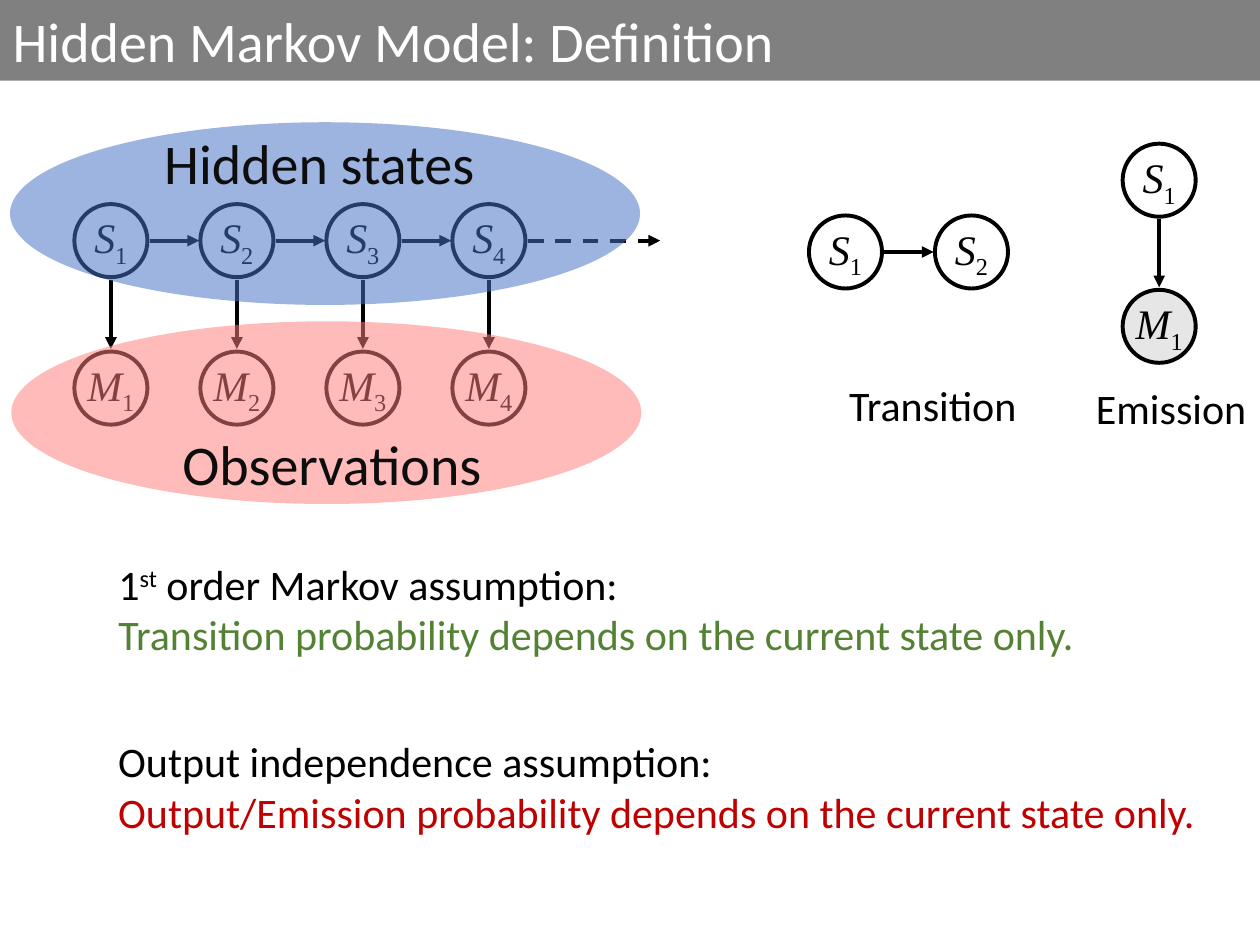
from lxml import etree
from pptx import Presentation
from pptx import util as u
from pptx.dml.color import RGBColor
from pptx.enum import dml, shapes, text
from pptx.oxml.ns import qn

BLACK = RGBColor(0x00, 0x00, 0x00)
INK = RGBColor(0x0D, 0x0D, 0x0D)
WHITE = RGBColor(0xFF, 0xFF, 0xFF)
GRAY = RGBColor(0x80, 0x80, 0x80)
PALE = RGBColor(0xE7, 0xE6, 0xE6)
GREEN = RGBColor(0x54, 0x82, 0x35)
RED = RGBColor(0xC0, 0x00, 0x00)
BLUE = RGBColor(0x44, 0x72, 0xC4)
PINK = RGBColor(0xFF, 0x7E, 0x79)

SIZE = 0.58
STEP = 1
GAP = 0.02
LEFT = 0.59
STATE_Y = 1.62
OBS_Y = 2.79


def write(frame, lines, size=24, font="Calibri", color=BLACK,
          align=text.PP_ALIGN.LEFT, anchor=text.MSO_ANCHOR.TOP, wrap=True):
    frame.word_wrap = wrap
    frame.auto_size = text.MSO_AUTO_SIZE.NONE
    frame.vertical_anchor = anchor
    for i, line in enumerate(lines):
        para = frame.paragraphs[0] if i == 0 else frame.add_paragraph()
        para.alignment = align
        for words, look in line:
            run = para.add_run()
            run.text = words
            run.font.size = u.Pt(size)
            run.font.name = font
            run.font.italic = look.get("italic", False)
            run.font.color.rgb = look.get("color", color)
            if "base" in look:
                run.font._element.set("baseline", str(look["base"] * 1000))


def label(slide, box, lines, **look):
    shape = slide.shapes.add_textbox(*map(u.Inches, box))
    write(shape.text_frame, lines, **look)


def oval(slide, box, fill, alpha=None):
    shape = slide.shapes.add_shape(shapes.MSO_SHAPE.OVAL, *map(u.Inches, box))
    shape.shadow.inherit = False
    shape.fill.solid()
    shape.fill.fore_color.rgb = fill
    shape.line.fill.background()
    if alpha:
        color = shape._element.spPr.find(qn("a:solidFill"))[0]
        etree.SubElement(color, qn("a:alpha")).set("val", str(alpha * 1000))
    return shape


def node(slide, x, y, name, index, fill=WHITE):
    shape = oval(slide, (x, y, SIZE, SIZE), fill)
    shape.line.color.rgb = BLACK
    shape.line.width = u.Pt(2.25)
    line = [(name, {"italic": True}), (str(index), {"base": -25})]
    write(shape.text_frame, [line], font="Times New Roman", wrap=False,
          align=text.PP_ALIGN.CENTER, anchor=text.MSO_ANCHOR.MIDDLE)


def arrow(slide, x1, y1, x2, y2, dash=False):
    link = slide.shapes.add_connector(
        shapes.MSO_CONNECTOR.STRAIGHT, *map(u.Inches, (x1, y1, x2, y2)))
    link.line.color.rgb = BLACK
    link.line.width = u.Pt(2.25)
    if dash:
        link.line.dash_style = dml.MSO_LINE.DASH
    tail = etree.SubElement(link.line._get_or_add_ln(), qn("a:tailEnd"))
    tail.set("type", "triangle")
    etree.SubElement(link._element.spPr, qn("a:effectLst"))


def across(slide, x, y, length=STEP - SIZE - 0.03, dash=False):
    start, mid = x + SIZE + GAP, y + SIZE / 2
    arrow(slide, start, mid, start + length, mid, dash)


def down(slide, x, y, end):
    mid = x + SIZE / 2
    arrow(slide, mid, y + SIZE + GAP, mid, end - GAP)


def title(slide, words):
    shape = slide.shapes.title
    shape.left, shape.top = u.Inches(0), u.Inches(0)
    shape.width, shape.height = u.Inches(10), u.Inches(0.64)
    shape.fill.solid()
    shape.fill.fore_color.rgb = GRAY
    write(shape.text_frame, [[(words, {})]], size=32, color=WHITE,
          anchor=text.MSO_ANCHOR.MIDDLE)


def chain(slide):
    for i in range(4):
        x = LEFT + i * STEP
        node(slide, x, STATE_Y, "S", i + 1)
        node(slide, x, OBS_Y, "M", i + 1)
        down(slide, x, STATE_Y, OBS_Y)
        if i < 3:
            across(slide, x, STATE_Y)
        else:
            across(slide, x, STATE_Y, length=1.05, dash=True)
    groups = [
        ("Hidden states", 0.08, 0.97, BLUE, 53, 0.78, 0.97),
        ("Observations", 0.09, 2.55, PINK, 52, 0.88, 3.36),
    ]
    for words, x, y, fill, alpha, left, top in groups:
        oval(slide, (x, y, 5, 1.45), fill, alpha)
        label(slide, (left, top, 3.51, 0.64), [[(words, {})]], size=32,
              color=INK, align=text.PP_ALIGN.CENTER)


def steps(slide):
    x, y = 6.42, 1.71
    node(slide, x, y, "S", 1)
    node(slide, x + STEP, y, "S", 2)
    across(slide, x, y)
    label(slide, (6.64, 2.96, 1.54, 0.5), [[("Transition", {})]])
    x, y, end = 8.91, 1.14, 2.3
    node(slide, x, y, "S", 1)
    node(slide, x, end, "M", 1, PALE)
    down(slide, x, y, end)
    label(slide, (8.6, 2.99, 1.54, 0.5), [[("Emission", {})]])


def rules(slide):
    label(slide, (0.84, 4.38, 8.25, 0.91), [
        [("1", {}), ("st", {"base": 30}), (" order Markov assumption:", {})],
        [("Transition probability depends on the current state only.",
          {"color": GREEN})],
    ])
    label(slide, (0.84, 5.79, 8.94, 0.91), [
        [("Output independence assumption:", {})],
        [("Output/Emission probability depends on the current state only.",
          {"color": RED})],
    ])


def main():
    deck = Presentation()
    deck.slide_width, deck.slide_height = u.Inches(10), u.Inches(7.5)
    slide = deck.slides.add_slide(deck.slide_layouts[5])
    title(slide, "Hidden Markov Model: Definition")
    chain(slide)
    steps(slide)
    rules(slide)
    deck.save("out.pptx")


if __name__ == "__main__":
    main()
